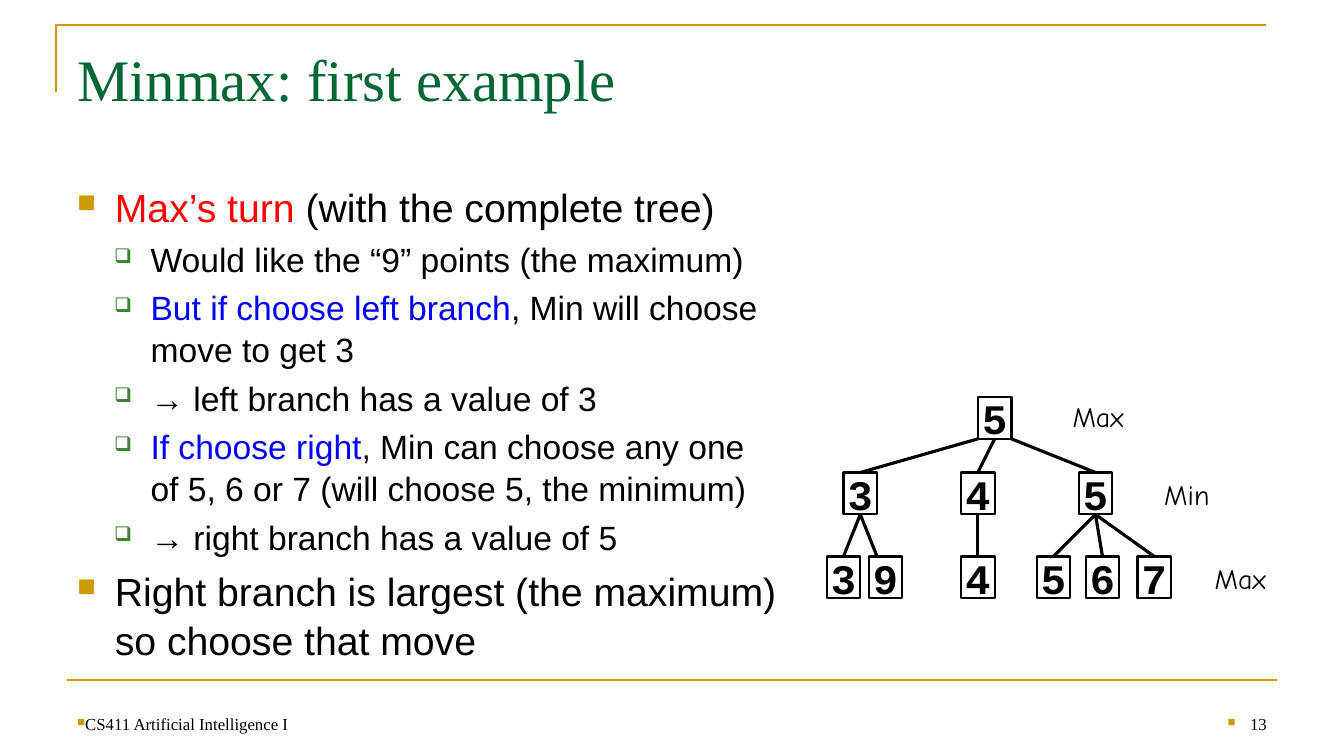
"""Build the slide on the first minmax example with its game tree."""
from lxml import etree
from pptx import Presentation
from pptx.dml.color import RGBColor
from pptx.enum import shapes, text
from pptx.oxml.ns import qn
from pptx.util import Pt

GOLD = RGBColor(0xCC, 0x99, 0x00)
GREEN = RGBColor(0x00, 0x66, 0x33)
LEAF = RGBColor(0x3B, 0x81, 0x2F)
RED = RGBColor(0xFF, 0x00, 0x00)
BLUE = RGBColor(0x00, 0x00, 0xFF)
BLACK = RGBColor(0x00, 0x00, 0x00)
SERIF = "Times New Roman"


def add_run(paragraph, words, size, font, color=BLACK, bold=False):
    run = paragraph.add_run()
    run.text = words
    run.font.size = Pt(size)
    run.font.name = font
    run.font.color.rgb = color
    run.font.bold = bold


def add_bullet(paragraph, mark, color, percent, margin, hang):
    props = paragraph._p.get_or_add_pPr()
    props.set("marL", str(Pt(margin)))
    props.set("indent", str(Pt(-hang)))
    tint = etree.SubElement(props, qn("a:buClr"))
    etree.SubElement(tint, qn("a:srgbClr"), val=str(color))
    etree.SubElement(props, qn("a:buSzPct"), val=str(percent * 1000))
    etree.SubElement(props, qn("a:buChar"), char=mark)


deck = Presentation()
deck.slide_width, deck.slide_height = Pt(960), Pt(540)
slide = deck.slides.add_slide(deck.slide_layouts[5])

corner = slide.shapes.build_freeform(Pt(40), Pt(66), scale=1.0)
corner.add_line_segments([(Pt(40), Pt(18)), (Pt(904), Pt(18))], close=False)
frame = corner.convert_to_shape()
frame.shadow.inherit = False
frame.fill.background()
frame.line.color.rgb = GOLD
frame.line.width = Pt(1.5)

title = slide.shapes.title
title.left, title.top, title.width, title.height = Pt(48), Pt(21.6), Pt(864), Pt(90)
title.text_frame.auto_size = text.MSO_AUTO_SIZE.NONE
title.text_frame.vertical_anchor = text.MSO_ANCHOR.TOP
title.text_frame.margin_top = Pt(9)
heading = title.text_frame.paragraphs[0]
heading.alignment = text.PP_ALIGN.LEFT
add_run(heading, "Minmax: first example", 42, SERIF, GREEN)

points = [
    (0, [("Max’s turn ", RED), ("(with the complete tree)", BLACK)]),
    (1, [("Would like the “9” points (the maximum)", BLACK)]),
    (1, [("But if choose left branch", BLUE), (", Min will choose move to get 3", BLACK)]),
    (1, [("→ left branch has a value of 3", BLACK)]),
    (1, [("If choose right", BLUE),
         (", Min can choose any one of 5, 6 or 7 (will choose 5, the minimum)", BLACK)]),
    (1, [("→ right branch has a value of 5", BLACK)]),
    (0, [("Right branch is largest (the maximum) so choose that move", BLACK)]),
]
bullets = [("■", GOLD, 65, 27, 27), ("❑", LEAF, 60, 52.5, 26)]
body = slide.shapes.add_textbox(Pt(48), Pt(126), Pt(515.5), Pt(356.4)).text_frame
body.word_wrap = True
for number, (level, parts) in enumerate(points):
    point = body.add_paragraph() if number else body.paragraphs[0]
    point.level = level
    add_bullet(point, *bullets[level])
    size = (28, 24)[level]
    point.line_spacing = 1.04
    if number:
        point.space_before = Pt(size * 0.2)
    for words, color in parts:
        add_run(point, words, size, "Arial", color)

footers = [
    (48, 584, "CS411 Artificial Intelligence I", text.PP_ALIGN.LEFT, 0),
    (688, 224, "13", text.PP_ALIGN.RIGHT, 16),
]
for left, width, words, align, hang in footers:
    footer = slide.shapes.add_textbox(Pt(left), Pt(492), Pt(width), Pt(36)).text_frame
    footer.word_wrap = True
    footer.vertical_anchor = text.MSO_ANCHOR.BOTTOM
    line = footer.paragraphs[0]
    line.alignment = align
    add_bullet(line, "■", GOLD, 65, hang, hang)
    add_run(line, words, 12, SERIF)

NODE_WIDTH, NODE_HEIGHT = 24, 30
MAX_TOP, MIN_TOP, LEAF_TOP = 283.5, 337.5, 397.5
levels = [
    (MAX_TOP, [("5", 710.5)]),
    (MIN_TOP, [("3", 614.5), ("4", 698.5), ("5", 782.5)]),
    (LEAF_TOP, [("3", 602.5), ("9", 632.5), ("4", 698.5),
                ("5", 752.5), ("6", 787.5), ("7", 824.5)]),
]
for top, nodes in levels:
    for value, center in nodes:
        node = slide.shapes.add_shape(
            shapes.MSO_SHAPE.RECTANGLE, Pt(center - NODE_WIDTH / 2), Pt(top),
            Pt(NODE_WIDTH), Pt(NODE_HEIGHT))
        node.shadow.inherit = False
        node.fill.background()
        node.line.color.rgb = BLACK
        node.line.width = Pt(1.5)
        node.text_frame.word_wrap = False
        node.text_frame.vertical_anchor = text.MSO_ANCHOR.MIDDLE
        score = node.text_frame.paragraphs[0]
        score.alignment = text.PP_ALIGN.CENTER
        add_run(score, value, 30, "Courier New", bold=True)

root_edges = [(698.5, 614.5), (710.5, 698.5), (722.5, 782.5)]
leaf_edges = [(614.5, 602.5), (614.5, 626.5), (698.5, 698.5),
              (782.5, 752.5), (782.5, 787.5), (782.5, 824.5)]
strokes = [(48, 486, 912, 486, GOLD, 1.5)]
for parent_top, child_top, edges in [(MAX_TOP, MIN_TOP, root_edges),
                                     (MIN_TOP, LEAF_TOP, leaf_edges)]:
    for parent, child in edges:
        strokes.append((child, child_top, parent, parent_top + NODE_HEIGHT, BLACK, 2.25))
for x1, y1, x2, y2, color, weight in strokes:
    stroke = slide.shapes.add_connector(
        shapes.MSO_CONNECTOR.STRAIGHT, Pt(x1), Pt(y1), Pt(x2), Pt(y2))
    stroke.line.color.rgb = color
    stroke.line.width = Pt(weight)
    etree.SubElement(stroke._element.spPr, qn("a:effectLst"))

for player, left, top, width in [("Max", 759, 281.5, 54), ("Min", 824.5, MIN_TOP, 48),
                                 ("Max", 860.5, LEAF_TOP, 54)]:
    turn = slide.shapes.add_textbox(Pt(left), Pt(top), Pt(width), Pt(31)).text_frame
    turn.word_wrap = False
    turn.auto_size = text.MSO_AUTO_SIZE.SHAPE_TO_FIT_TEXT
    add_run(turn.paragraphs[0], player, 20, "Comic Neue")

deck.save("out.pptx")
